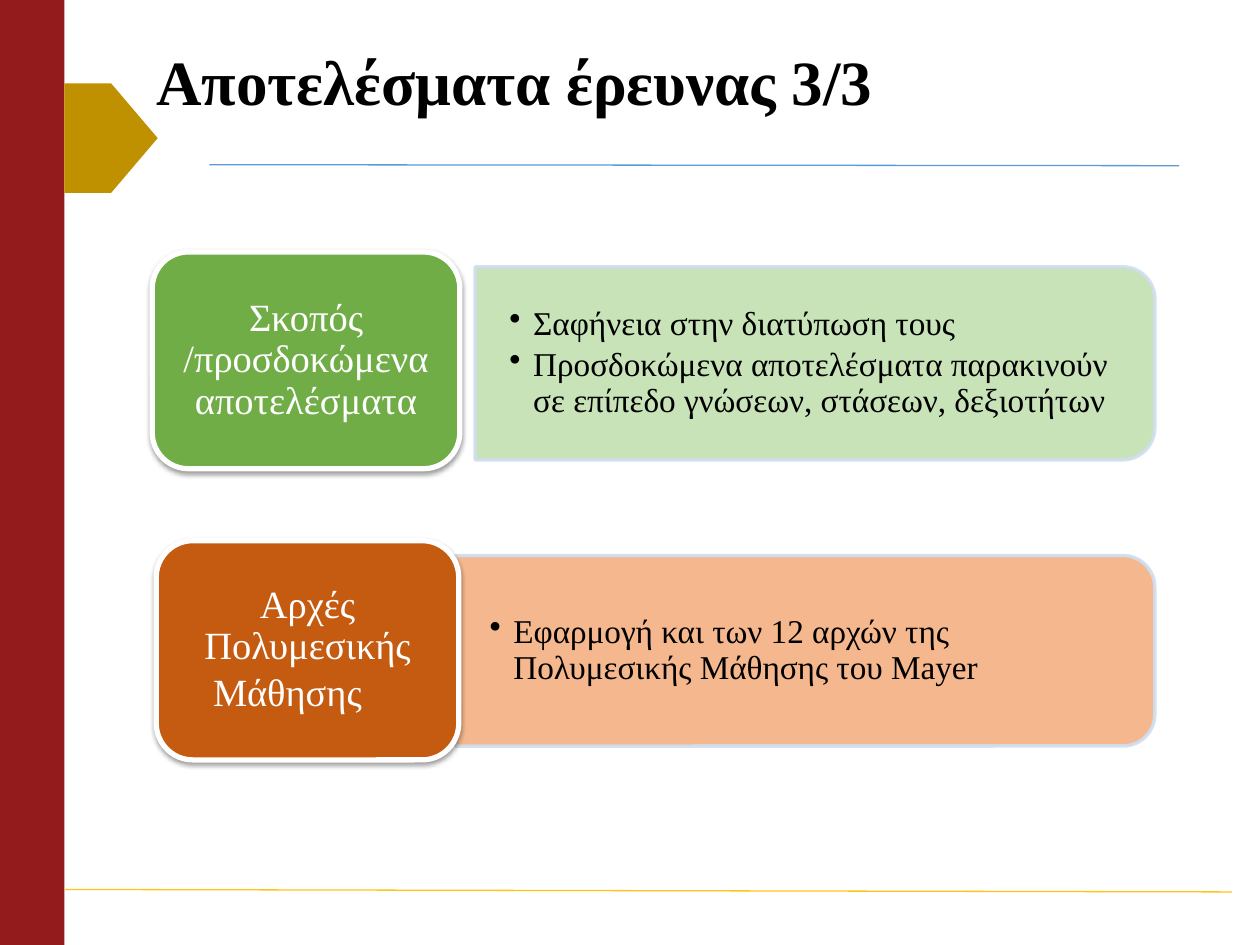
import lxml.etree
import pptx
import pptx.dml.color
import pptx.enum.shapes
import pptx.enum.text
import pptx.oxml.ns
import pptx.util

Cm = pptx.util.Cm
Pt = pptx.util.Pt
RGBColor = pptx.dml.color.RGBColor
SHAPE = pptx.enum.shapes.MSO_SHAPE
ALIGN = pptx.enum.text.PP_ALIGN
qn = pptx.oxml.ns.qn

MAROON = RGBColor(0x93, 0x1B, 0x1B)
OCHRE = RGBColor(0xBF, 0x90, 0x00)
YELLOW = RGBColor(0xFE, 0xC5, 0x19)
BLUE = RGBColor(0x5B, 0x9B, 0xD5)
PALE_BLUE = RGBColor(0xCF, 0xDE, 0xEF)
GREEN = RGBColor(0x70, 0xAD, 0x47)
PALE_GREEN = RGBColor(0xC4, 0xE0, 0xB2)
RUST = RGBColor(0xC5, 0x5A, 0x11)
PALE_ORANGE = RGBColor(0xF4, 0xB0, 0x81)
WHITE = RGBColor(0xFF, 0xFF, 0xFF)
BLACK = RGBColor(0, 0, 0)


def apply(target, values):
    for name, value in values.items():
        setattr(target, name, value)


def add_xml(parent, tag, **attributes):
    return lxml.etree.SubElement(parent, qn(tag), attributes)


class SlideBuilder:
    font = "Times New Roman"
    line_spacing = 0.9
    corner = 0.167

    def __init__(self, slide):
        self.slide = slide

    def shape(self, kind, box, fill, line=None, width=0):
        shape = self.slide.shapes.add_shape(kind, *map(Cm, box))
        shape.shadow.inherit = False
        shape.fill.solid()
        shape.fill.fore_color.rgb = fill
        if line is None:
            shape.line.fill.background()
        else:
            shape.line.color.rgb = line
            shape.line.width = Pt(width)
        return shape

    def rule(self, start, end, color):
        rule = self.slide.shapes.add_connector(
            pptx.enum.shapes.MSO_CONNECTOR.STRAIGHT, *map(Cm, start + end))
        rule.line.color.rgb = color
        rule.line.width = Pt(0.75)
        add_xml(rule._element.spPr, "a:effectLst")

    def frame(self, shape, side, edge):
        apply(shape.text_frame, {
            "word_wrap": True,
            "vertical_anchor": pptx.enum.text.MSO_ANCHOR.MIDDLE,
            "margin_left": Cm(side), "margin_right": Cm(side),
            "margin_top": Cm(edge), "margin_bottom": Cm(edge),
        })
        return shape.text_frame

    def run(self, paragraph, text, size, color, bold=False):
        run = paragraph.add_run()
        run.text = text
        apply(run.font, {"name": self.font, "size": Pt(size), "bold": bold})
        run.font.color.rgb = color

    def title(self, box, text):
        frame = self.frame(self.slide.shapes.add_textbox(*map(Cm, box)), 0.25, 0.13)
        heading = frame.paragraphs[0]
        heading.line_spacing = self.line_spacing
        self.run(heading, text, 36, BLACK, True)

    def bar(self, box, fill):
        left, top, width, height = box
        shift = (width - height) / 2
        bar = self.shape(SHAPE.ROUND_2_SAME_RECTANGLE,
                         (left + shift, top - shift, height, width), fill, PALE_BLUE, 2)
        bar.rotation = 90
        bar.adjustments[0] = self.corner
        bar.adjustments[1] = 0
        for color in bar._element.spPr.iter(qn("a:srgbClr")):
            add_xml(color, "a:alpha", val="90000")

    def bullets(self, bar_box, items):
        left, top, width, height = bar_box
        box = (left, top + 0.18, width - 0.19, height - 0.38)
        frame = self.frame(self.slide.shapes.add_textbox(*map(Cm, box)), 0.69, 0.36)
        for index, item in enumerate(items):
            paragraph = frame.add_paragraph() if index else frame.paragraphs[0]
            apply(paragraph, {"line_spacing": self.line_spacing,
                              "space_before": Pt(2.9 if index else 0)})
            properties = paragraph._p.get_or_add_pPr()
            properties.set("marL", str(Cm(0.48)))
            properties.set("indent", str(-Cm(0.48)))
            add_xml(properties, "a:buChar", char="•")
            self.run(paragraph, item, 19, BLACK)

    def card(self, box, fill, runs):
        card = self.shape(SHAPE.ROUNDED_RECTANGLE, box, fill, WHITE, 3)
        card.adjustments[0] = self.corner
        effects = card._element.spPr.find(qn("a:effectLst"))
        shadow = add_xml(effects, "a:outerShdw", blurRad=str(Pt(3.1)), dist=str(Pt(1.6)),
                         dir="5400000", rotWithShape="0")
        color = add_xml(shadow, "a:srgbClr", val=str(BLACK))
        add_xml(color, "a:alpha", val="38000")
        label = self.frame(card, 0.23, 0.13).paragraphs[0]
        apply(label, {"alignment": ALIGN.CENTER, "line_spacing": self.line_spacing})
        for text, size in runs:
            self.run(label, text, size, WHITE)


def main():
    deck = pptx.Presentation()
    apply(deck, {"slide_width": Cm(25.4), "slide_height": Cm(19.05)})
    builder = SlideBuilder(deck.slides.add_slide(deck.slide_layouts[6]))

    builder.shape(SHAPE.RECTANGLE, (0, 0, 1.3, 19.05), MAROON)
    builder.rule((4.22, 3.32), (23.77, 3.34), BLUE)
    builder.rule((1.3, 17.93), (24.84, 17.98), YELLOW)
    builder.shape(SHAPE.PENTAGON, (1.3, 1.68, 1.88, 2.21), OCHRE)
    builder.title((2.9, 0.91, 21.59, 1.6), "Αποτελέσματα έρευνας 3/3")

    findings = [
        ((9.58, 5.38, 13.7, 3.89), PALE_GREEN,
         ["Σαφήνεια στην διατύπωση τους",
          "Προσδοκώμενα αποτελέσματα παρακινούν σε επίπεδο γνώσεων, στάσεων, δεξιοτήτων"],
         (3.07, 5.08, 6.2, 4.37), GREEN,
         [("Σκοπός /προσδοκώμενα αποτελέσματα", 22)]),
        ((9.18, 11.2, 14.1, 3.84), PALE_ORANGE,
         ["Εφαρμογή και των 12 αρχών της Πολυμεσικής Μάθησης του Mayer"],
         (3.15, 10.9, 6.1, 4.42), RUST,
         [("Αρχές Πολυμεσικής Μάθησης ", 22), ("\t", 25)]),
    ]
    for bar_box, bar_fill, items, card_box, card_fill, label in findings:
        builder.bar(bar_box, bar_fill)
        builder.bullets(bar_box, items)
        builder.card(card_box, card_fill, label)

    deck.save("out.pptx")


if __name__ == "__main__":
    main()
